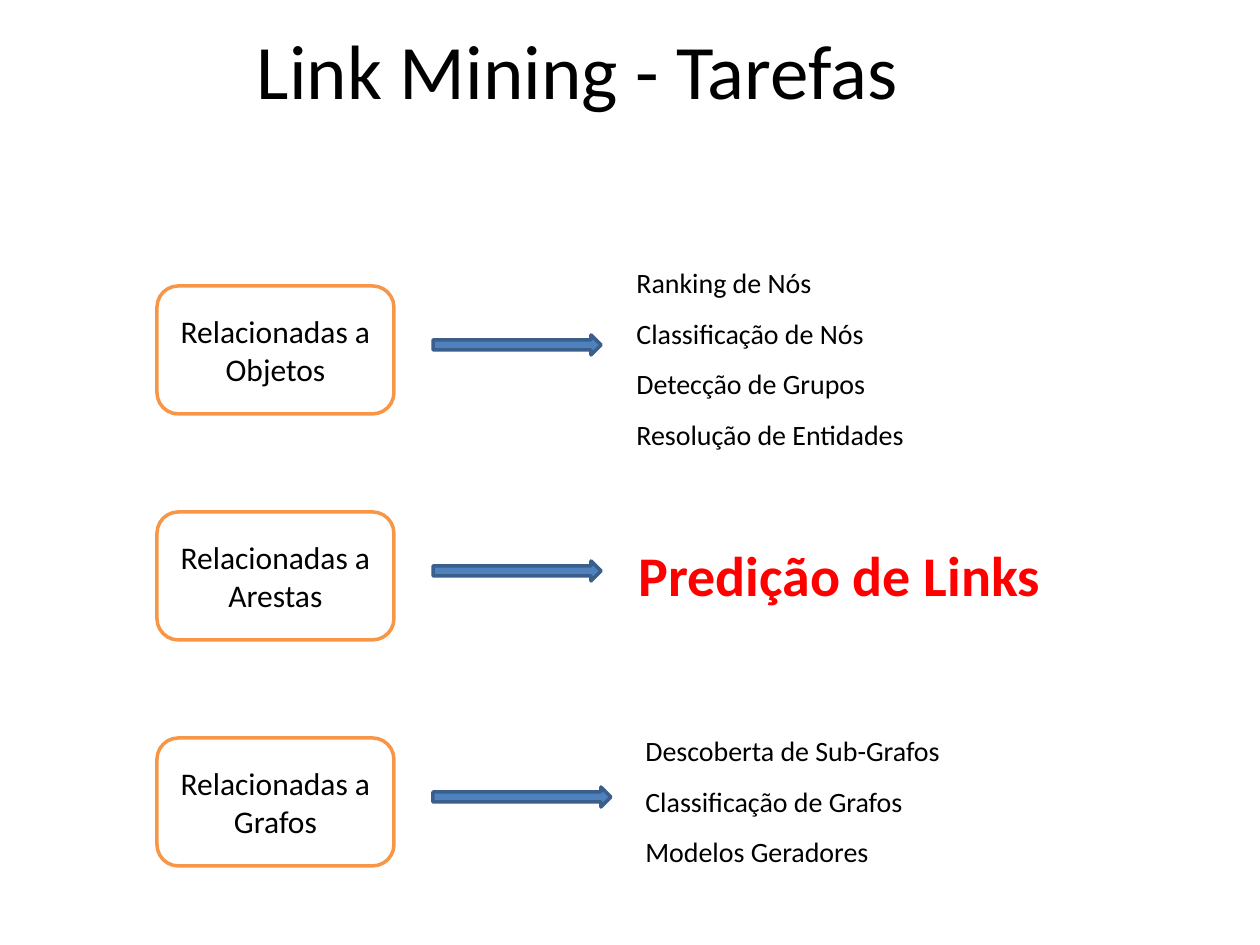
from pptx import Presentation
from pptx.dml.color import RGBColor
from pptx.enum.shapes import MSO_SHAPE
from pptx.enum.text import MSO_ANCHOR, MSO_AUTO_SIZE, PP_ALIGN
from pptx.util import Emu, Pt

BLACK = RGBColor(0x00, 0x00, 0x00)
WHITE = RGBColor(0xFF, 0xFF, 0xFF)
RED = RGBColor(0xFF, 0x00, 0x00)
ORANGE = RGBColor(0xF7, 0x96, 0x46)
BLUE = RGBColor(0x4F, 0x81, 0xBD)
DARK_BLUE = RGBColor(0x3A, 0x5F, 0x8C)

# Content: category, arrow width, tasks, place of the task list, task format
TITLE = "Link Mining - Tarefas"
ROWS = [
    ("Relacionadas a Objetos", 168,
     ["Ranking de Nós", "Classificação de Nós", "Detecção de Grupos",
      "Resolução de Entidades"],
     (624, 243, 331, 210), dict(size=16)),
    ("Relacionadas a Arestas", 168,
     ["Predição de Links"],
     (626, 501, 431, 105), dict(size=32, color=RED, bold=True)),
    ("Relacionadas a Grafos", 178,
     ["Descoberta de Sub-Grafos", "Classificação de Grafos", "Modelos Geradores"],
     (633, 711, 362, 165), dict(size=16)),
]

# Layout in px, 126 to the inch
BOX_LEFT, BOX_TOP, BOX_WIDTH, BOX_HEIGHT = 157, 286, 237, 128
ROW_PITCH = 226
ARROW_LEFT, ARROW_DROP, ARROW_HEIGHT = 433, 49, 20


def px(value):
    return Emu(round(value * 914400 / 126))


def write(shape, lines, size, color=BLACK, bold=False, align=PP_ALIGN.LEFT,
          anchor=MSO_ANCHOR.TOP, spacing=None, wrap=True):
    frame = shape.text_frame
    frame.word_wrap = wrap
    frame.vertical_anchor = anchor
    frame.text = "\n".join(lines)
    for para in frame.paragraphs:
        para.alignment = align
        para.line_spacing = spacing
        for span in para.runs:
            span.font.name = "Calibri"
            span.font.size = Pt(size)
            span.font.bold = bold
            span.font.color.rgb = color


def add_text(page, place, lines, **style):
    box = page.shapes.add_textbox(*map(px, place))
    write(box, lines, **style)
    return box


def add_block(page, kind, place, fill, line):
    block = page.shapes.add_shape(kind, *map(px, place))
    block.shadow.inherit = False
    block.fill.solid()
    block.fill.fore_color.rgb = fill
    block.line.color.rgb = line
    block.line.width = Pt(2)
    return block


deck = Presentation()
deck.slide_width, deck.slide_height = px(1260), px(945)
page = deck.slides.add_slide(deck.slide_layouts[6])

# Title
add_text(page, (63, -10, 1029, 158), [TITLE], size=44,
         align=PP_ALIGN.CENTER, anchor=MSO_ANCHOR.MIDDLE)

# One row per category: box, arrow, tasks
for index, (category, arrow_width, tasks, place, style) in enumerate(ROWS):
    top = BOX_TOP + index * ROW_PITCH
    box = add_block(page, MSO_SHAPE.ROUNDED_RECTANGLE,
                    (BOX_LEFT, top, BOX_WIDTH, BOX_HEIGHT), WHITE, ORANGE)
    write(box, [category], size=18, align=PP_ALIGN.CENTER, anchor=MSO_ANCHOR.MIDDLE)
    add_block(page, MSO_SHAPE.RIGHT_ARROW,
              (ARROW_LEFT, top + ARROW_DROP, arrow_width, ARROW_HEIGHT),
              BLUE, DARK_BLUE)
    task_box = add_text(page, place, tasks, spacing=1.5, wrap=False, **style)
    task_box.text_frame.auto_size = MSO_AUTO_SIZE.SHAPE_TO_FIT_TEXT

deck.save("out.pptx")
